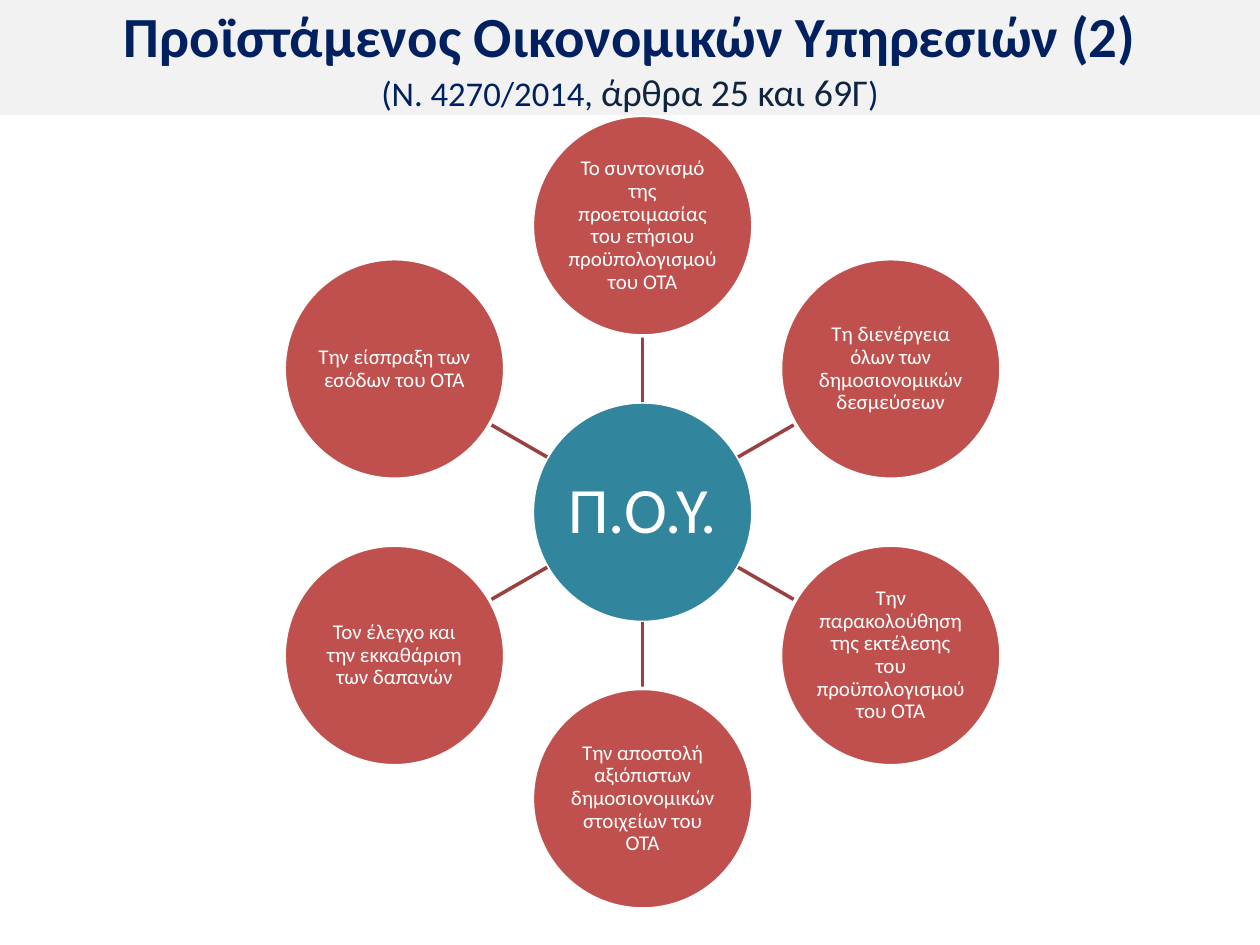
"""Hub-and-spoke slide on the duties of the head of financial services."""
import math
from dataclasses import dataclass

import pptx
import pptx.dml.color
import pptx.enum.shapes
import pptx.enum.text
import pptx.oxml.ns
import pptx.util
from lxml import etree

WIDE = pptx.util.Inches(10)
HIGH = pptx.util.Inches(7.5)
HUB_X = 0.51 * WIDE
HUB_Y = 0.542 * HIGH
SIZE = 0.175 * WIDE
RING = 0.2274 * WIDE
FONT = "Calibri"
WHITE = "FFFFFF"
NAVY = "002060"
RED = "C0504D"


@dataclass
class Run:
    """A piece of text in one style."""
    text: str
    size: float
    color: str = WHITE
    bold: bool = False


@dataclass
class Disc:
    """A labelled circle."""
    run: Run
    fill: str
    inset: float


DUTIES = [
    "Το συντονισμό της προετοιμασίας του ετήσιου προϋπολογισμού του ΟΤΑ",
    "Τη διενέργεια όλων των δημοσιονομικών δεσμεύσεων",
    "Την παρακολούθηση της εκτέλεσης του προϋπολογισμού του ΟΤΑ",
    "Την αποστολή αξιόπιστων δημοσιονομικών στοιχείων του ΟΤΑ",
    "Τον έλεγχο και την εκκαθάριση των δαπανών",
    "Την είσπραξη των εσόδων του ΟΤΑ",
]
TITLE = [
    [Run("Προϊστάμενος Οικονομικών Υπηρεσιών (2)", 32.4, NAVY, True)],
    [
        Run("(Ν. 4270/2014, ", 19.8, NAVY),
        Run("άρθρα 25 και 69Γ", 21.6, "0F243E"),
        Run(")", 19.8, NAVY),
    ],
]


def tint(form, code: str) -> None:
    """Set a solid colour on a fill or a line's fill."""
    form.solid()
    form.fore_color.rgb = pptx.dml.color.RGBColor.from_string(code)


def write(para, item: Run) -> None:
    """Add one styled run to a paragraph."""
    run = para.add_run()
    run.text = item.text
    run.font.name = FONT
    run.font.size = pptx.util.Pt(item.size)
    run.font.bold = item.bold
    tint(run.font.fill, item.color)


def center(shape):
    """Centre a shape's text and return its first paragraph."""
    frame = shape.text_frame
    frame.word_wrap = True
    frame.vertical_anchor = pptx.enum.text.MSO_ANCHOR.MIDDLE
    para = frame.paragraphs[0]
    para.alignment = pptx.enum.text.PP_ALIGN.CENTER
    return para


def place(reach: float, angle: float) -> tuple[int, int]:
    """Find the point at a distance and clockwise angle from the hub."""
    return (round(HUB_X + reach * math.sin(angle)),
            round(HUB_Y - reach * math.cos(angle)))


def draw_disc(slide, disc: Disc, reach: float = 0, angle: float = 0) -> None:
    """Draw a circle with its label."""
    x, y = place(reach, angle)
    half = round(SIZE / 2)
    shape = slide.shapes.add_shape(
        pptx.enum.shapes.MSO_SHAPE.OVAL, x - half, y - half, 2 * half, 2 * half)
    shape.shadow.inherit = False
    tint(shape.fill, disc.fill)
    tint(shape.line.fill, WHITE)
    shape.line.width = pptx.util.Pt(2)
    frame = shape.text_frame
    inset = pptx.util.Inches(disc.inset)
    frame.margin_left = frame.margin_right = inset
    frame.margin_top = frame.margin_bottom = inset
    para = center(shape)
    para.line_spacing = 0.9
    write(para, disc.run)


def draw_spoke(slide, angle: float) -> None:
    """Draw the line from the hub's rim to a duty's rim."""
    line = slide.shapes.add_connector(
        pptx.enum.shapes.MSO_CONNECTOR.STRAIGHT,
        *place(SIZE / 2, angle), *place(RING - SIZE / 2, angle))
    tint(line.line.fill, "9A403E")
    line.line.width = pptx.util.Pt(2)
    etree.SubElement(line.element.spPr, pptx.oxml.ns.qn("a:effectLst"))


def draw_title(slide) -> None:
    """Draw the title band."""
    band = slide.shapes.add_shape(
        pptx.enum.shapes.MSO_SHAPE.RECTANGLE, 0, 0, WIDE, round(0.122 * HIGH))
    band.shadow.inherit = False
    tint(band.fill, "F2F2F2")
    band.line.fill.background()
    para = center(band)
    for row, runs in enumerate(TITLE):
        if row:
            para.add_line_break()
        for item in runs:
            write(para, item)


def main() -> None:
    """Build and save the slide."""
    deck = pptx.Presentation()
    deck.slide_width, deck.slide_height = WIDE, HIGH
    slide = deck.slides.add_slide(deck.slide_layouts[6])
    draw_disc(slide, Disc(Run("Π.Ο.Υ.", 37), "31859C", 0.03))
    for step, duty in enumerate(DUTIES):
        angle = math.tau * step / len(DUTIES)
        draw_spoke(slide, angle)
        draw_disc(slide, Disc(Run(duty, 12), RED, 0.01), RING, angle)
    draw_title(slide)
    deck.save("out.pptx")


if __name__ == "__main__":
    main()
